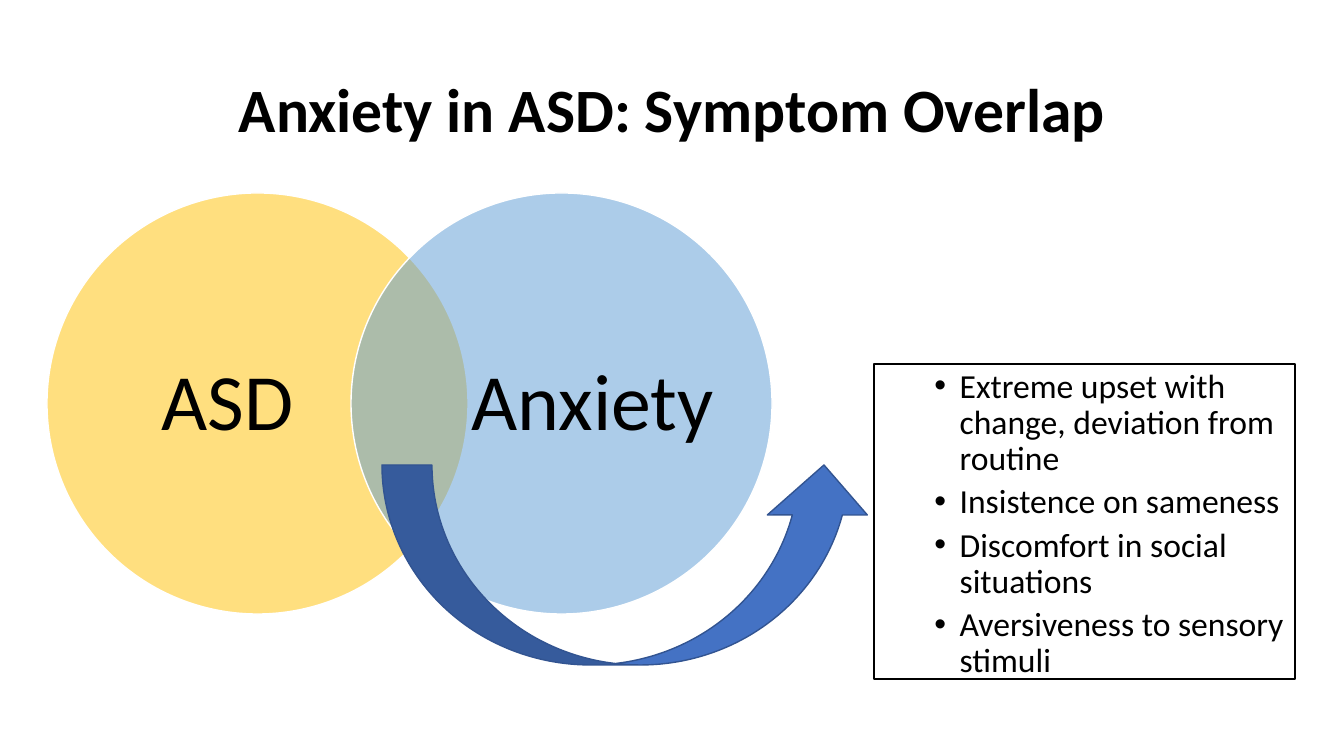
import dataclasses

import pptx
import pptx.dml.color
import pptx.enum.shapes
import pptx.enum.text
import pptx.oxml
import pptx.oxml.ns
import pptx.util

EMU_PER_PX = 12192000 / 1344
SHAPE = pptx.enum.shapes.MSO_SHAPE
ALIGN = pptx.enum.text.PP_ALIGN
ANCHOR = pptx.enum.text.MSO_ANCHOR
AUTO = pptx.enum.text.MSO_AUTO_SIZE


@dataclasses.dataclass(frozen=True)
class Theme:
    font: str = "Calibri"
    text: str = "000000"
    white: str = "FFFFFF"
    asd: str = "FFC000"
    anxiety: str = "5B9BD5"
    arrow: str = "4472C4"
    arrow_line: str = "325491"
    title_pt: int = 44
    label_pt: int = 57
    list_pt: int = 24


THEME = Theme()
SYMPTOMS = [
    "Extreme upset with change, deviation from routine",
    "Insistence on sameness",
    "Discomfort in social situations",
    "Aversiveness to sensory stimuli",
]


def px(n):
    return pptx.util.Emu(round(n * EMU_PER_PX))


def rgb(color):
    return pptx.dml.color.RGBColor.from_string(color)


def apply(obj, values):
    for name, value in values.items():
        setattr(obj, name, value)


def place(sp, x, y, w, h):
    apply(sp, {"left": px(x), "top": px(y), "width": px(w), "height": px(h)})


def set_line(sp, color, width):
    sp.line.color.rgb = rgb(color)
    sp.line.width = pptx.util.Pt(width)


def write(p, text, size, bold=False, **paragraph_format):
    apply(p, {"line_spacing": 0.9, **paragraph_format})
    r = p.add_run()
    r.text = text
    apply(r.font, {"name": THEME.font, "size": pptx.util.Pt(size), "bold": bold})
    r.font.color.rgb = rgb(THEME.text)


def add_bullet(p):
    pPr = p._p.get_or_add_pPr()
    pPr.set("marL", str(pptx.util.Inches(0.75)))
    pPr.set("indent", str(pptx.util.Inches(-0.25)))
    ns = pptx.oxml.ns.nsdecls("a")
    for xml in (f'<a:buFont {ns} typeface="Arial"/>', f'<a:buChar {ns} char="•"/>'):
        pPr.append(pptx.oxml.parse_xml(xml))


def add_filled(slide, kind, box, fill, line, alpha=None):
    sp = slide.shapes.add_shape(kind, *map(px, box))
    sp.shadow.inherit = False
    sp.fill.solid()
    sp.fill.fore_color.rgb = rgb(fill)
    if alpha is not None:
        color = sp.fill._xPr.find(".//" + pptx.oxml.ns.qn("a:srgbClr"))
        ns = pptx.oxml.ns.nsdecls("a")
        color.append(pptx.oxml.parse_xml(f'<a:alpha {ns} val="{alpha * 1000}"/>'))
    set_line(sp, line, 1)


def add_label(slide, text, x):
    tf = slide.shapes.add_textbox(*map(px, (x, 243, 243, 323))).text_frame
    apply(tf, {"word_wrap": True, "vertical_anchor": ANCHOR.MIDDLE,
               "margin_left": 0, "margin_right": 0,
               "margin_top": 0, "margin_bottom": 0})
    write(tf.paragraphs[0], text, THEME.label_pt, alignment=ALIGN.CENTER)


def fill_title(sp, text):
    place(sp, 93, 40, 1159, 146)
    sp.text_frame.vertical_anchor = ANCHOR.MIDDLE
    write(sp.text_frame.paragraphs[0], text, THEME.title_pt, bold=True,
          alignment=ALIGN.CENTER)


def fill_list(sp, items):
    place(sp, 874, 364, 421, 325)
    set_line(sp, THEME.text, 1.25)
    tf = sp.text_frame
    apply(tf, {"word_wrap": True, "auto_size": AUTO.SHAPE_TO_FIT_TEXT,
               "vertical_anchor": ANCHOR.TOP})
    for i, item in enumerate(items):
        p = tf.add_paragraph() if i else tf.paragraphs[0]
        write(p, item, THEME.list_pt, level=1, space_before=pptx.util.Pt(5))
        add_bullet(p)


def main():
    prs = pptx.Presentation()
    apply(prs, {"slide_width": px(1344), "slide_height": px(756)})
    slide = prs.slides.add_slide(prs.slide_layouts[1])

    # Title
    fill_title(slide.shapes.title, "Anxiety in ASD: Symptom Overlap")

    # Overlapping circles
    for text, x, label_x, fill in (("ASD", 47, 106, THEME.asd),
                                   ("Anxiety", 351, 471, THEME.anxiety)):
        add_filled(slide, SHAPE.OVAL, (x, 193, 421, 421), fill, THEME.white, alpha=50)
        add_label(slide, text, label_x)

    # Shared symptoms
    fill_list(slide.placeholders[1], SYMPTOMS)

    # Arrow from the overlap to the list
    add_filled(slide, SHAPE.CURVED_UP_ARROW, (382, 465, 492, 200),
               THEME.arrow, THEME.arrow_line)

    prs.save("out.pptx")


if __name__ == "__main__":
    main()
